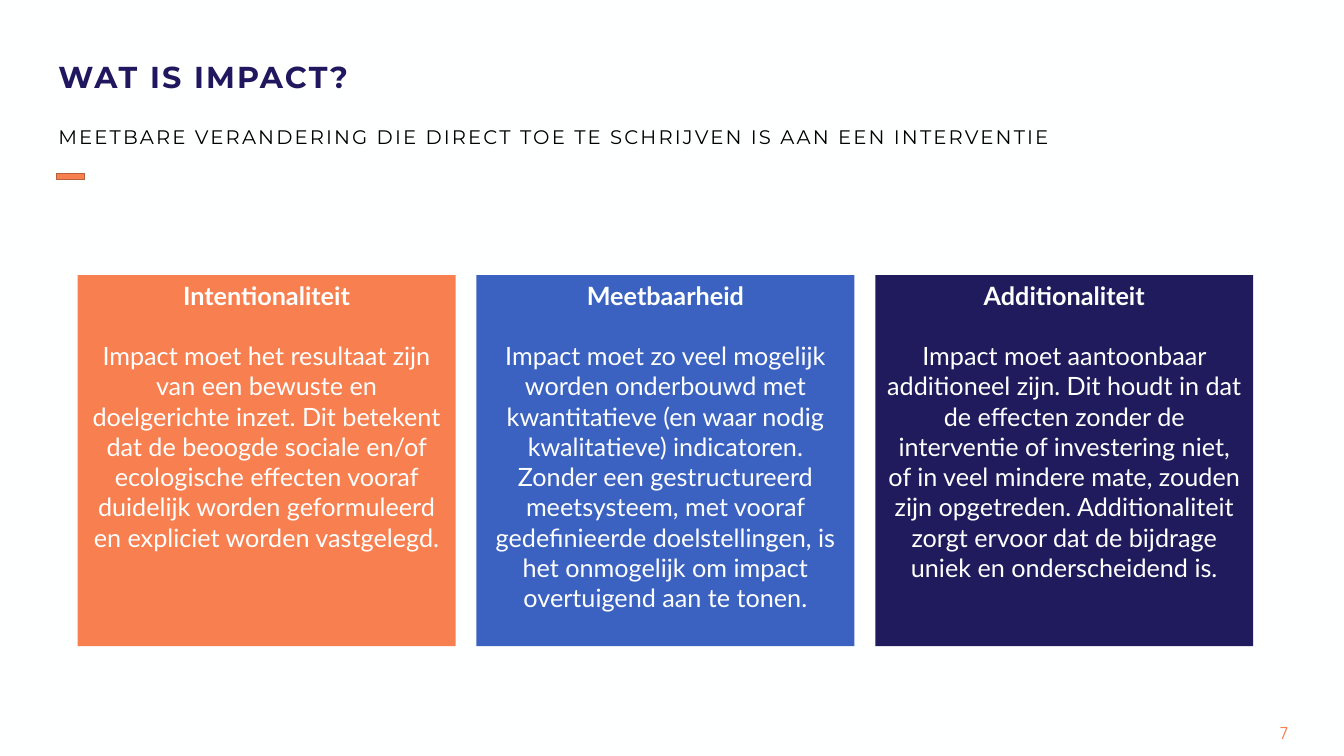
from pptx import Presentation
from pptx.dml.color import RGBColor
from pptx.enum.shapes import MSO_SHAPE
from pptx.enum.text import MSO_ANCHOR, PP_ALIGN
from pptx.util import Pt

WHITE = RGBColor(0xFE, 0xFF, 0xFF)
BLACK = RGBColor(0x00, 0x00, 0x00)
ORANGE = RGBColor(0xF8, 0x7F, 0x4F)
BROWN = RGBColor(0xB7, 0x5E, 0x3A)
BLUE = RGBColor(0x3B, 0x62, 0xC1)
NAVY = RGBColor(0x20, 0x1B, 0x5C)
TITLE_NAVY = RGBColor(0x20, 0x18, 0x5E)

CARD_LEFT, CARD_TOP, CARD_WIDTH, CARD_HEIGHT = 55.4, 196.5, 270, 265
CARD_PITCH = 284.9

CARDS = [
    (ORANGE, "Intentionaliteit",
     "Impact moet het resultaat zijn van een bewuste en doelgerichte inzet. "
     "Dit betekent dat de beoogde sociale en/of ecologische effecten vooraf "
     "duidelijk worden geformuleerd en expliciet worden vastgelegd."),
    (BLUE, "Meetbaarheid",
     "Impact moet zo veel mogelijk worden onderbouwd met kwantitatieve (en waar "
     "nodig kwalitatieve) indicatoren. Zonder een gestructureerd meetsysteem, met "
     "vooraf gedefinieerde doelstellingen, is het onmogelijk om impact "
     "overtuigend aan te tonen."),
    (NAVY, "Additionaliteit",
     "Impact moet aantoonbaar additioneel zijn. Dit houdt in dat de effecten "
     "zonder de interventie of investering niet, of in veel mindere mate, zouden "
     "zijn opgetreden. Additionaliteit zorgt ervoor dat de bijdrage uniek en "
     "onderscheidend is."),
]


def write(paragraph, text, color, tracking=0, **font_format):
    """Add one run; tracking is the letter spacing in points."""
    run = paragraph.add_run()
    run.text = text
    run.font.color.rgb = color
    for name, value in font_format.items():
        setattr(run.font, name, value)
    if tracking:
        run._r.get_or_add_rPr().set("spc", str(int(tracking * 100)))


def add_text(slide, box, text, color, anchor=MSO_ANCHOR.MIDDLE, **text_format):
    frame = slide.shapes.add_textbox(*map(Pt, box)).text_frame
    frame.word_wrap = True
    frame.vertical_anchor = anchor
    paragraph = frame.paragraphs[0]
    write(paragraph, text, color, **text_format)
    return paragraph


def add_rectangle(slide, box, fill):
    shape = slide.shapes.add_shape(MSO_SHAPE.RECTANGLE, *map(Pt, box))
    shape.shadow.inherit = False
    shape.fill.solid()
    shape.fill.fore_color.rgb = fill
    shape.line.fill.background()
    return shape


def add_card(slide, left, fill, heading, body):
    card = add_rectangle(slide, (left, CARD_TOP, CARD_WIDTH, CARD_HEIGHT), fill)
    frame = card.text_frame
    frame.word_wrap = True
    frame.vertical_anchor = MSO_ANCHOR.TOP
    heading_paragraph = frame.paragraphs[0]
    body_paragraph = frame.add_paragraph()
    body_paragraph.space_before = Pt(21.6)
    for paragraph, text, bold in ((heading_paragraph, heading, True),
                                  (body_paragraph, body, False)):
        paragraph.alignment = PP_ALIGN.CENTER
        write(paragraph, text, WHITE, name="Lato", size=Pt(18), bold=bold)


def main():
    presentation = Presentation()
    presentation.slide_width, presentation.slide_height = Pt(960), Pt(540)
    slide = presentation.slides.add_slide(presentation.slide_layouts[6])
    slide.background.fill.solid()
    slide.background.fill.fore_color.rgb = WHITE

    add_text(slide, (907.2, 512.6, 44.6, 17.3), "7", ORANGE,
             anchor=MSO_ANCHOR.TOP, name="Manrope", size=Pt(12))
    accent = add_rectangle(slide, (40.3, 123.8, 20.2, 4.3), ORANGE)
    accent.line.color.rgb = BROWN
    accent.line.width = Pt(1)

    title = add_text(slide, (34.6, 43.2, 901.4, 26.6), "WAT IS IMPACT?", TITLE_NAVY,
                     tracking=1.5, name="Montserrat", size=Pt(21.6), bold=True)
    title.line_spacing = 0.9
    add_text(slide, (34.6, 74.9, 901.4, 45.4),
             "MEETBARE VERANDERING DIE DIRECT TOE TE SCHRIJVEN IS AAN EEN INTERVENTIE",
             BLACK, tracking=1.5, name="Montserrat", size=Pt(14))

    for index, card in enumerate(CARDS):
        add_card(slide, CARD_LEFT + index * CARD_PITCH, *card)

    presentation.save("out.pptx")


if __name__ == "__main__":
    main()
